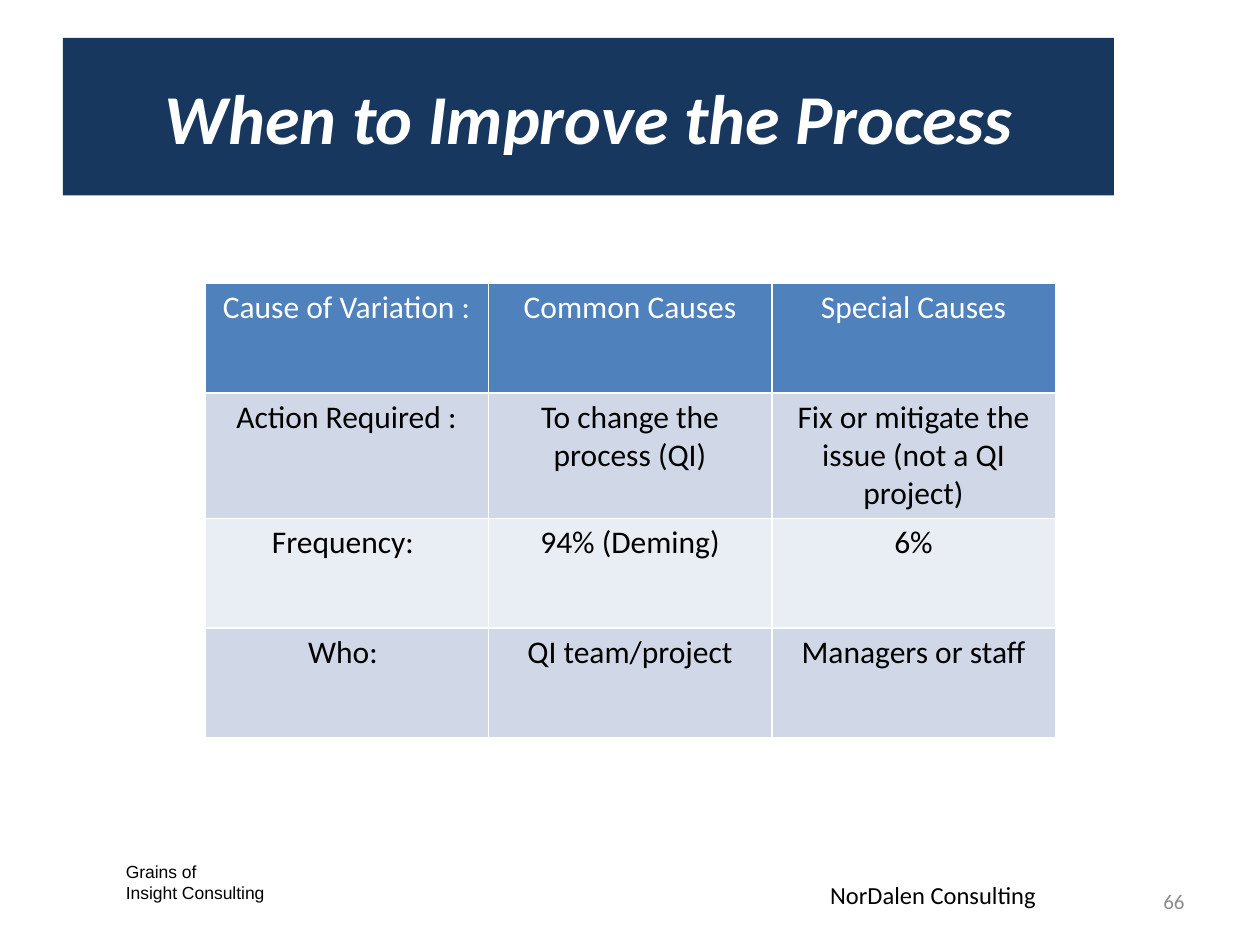
from lxml.etree import SubElement
from pptx import Presentation
from pptx.dml.color import RGBColor
from pptx.enum.shapes import MSO_SHAPE
from pptx.enum.text import MSO_ANCHOR, PP_ALIGN
from pptx.oxml.ns import qn
from pptx.util import Inches, Pt

theme = {
    "navy": "17375E", "head": "4F81BD", "bands": ("D0D8E8", "E9EDF4"),
    "white": "FFFFFF", "black": "000000", "gray": "8C8C8C",
    "main": "Calibri", "side": "Arial",
    "title": 40, "cell": 18, "brand": 14, "page": 12, "note": 10,
}
rows = [
    ("Cause of Variation :", "Common Causes", "Special Causes"),
    ("Action Required :", "To change the process (QI)",
     "Fix or mitigate the issue (not a QI project)"),
    ("Frequency: ", "94% (Deming)", "6%"),
    ("Who: ", "QI team/project", "Managers or staff"),
]

deck = Presentation()
deck.slide_width, deck.slide_height = Inches(10), Inches(7.5)
slide = deck.slides.add_slide(deck.slide_layouts[6])


def area(left, top, width, height):
    wide, high = deck.slide_width / 100, deck.slide_height / 100
    return [round(n) for n in (left * wide, top * high, width * wide, height * high)]


def write(frame, text, size, color, face="main", align=PP_ALIGN.LEFT, bold=False):
    frame.word_wrap = True
    frame.text = text
    for para in frame.paragraphs:
        para.alignment = align
        font = para.font
        font.name, font.size, font.bold = theme[face], Pt(theme[size]), bold
        font.color.rgb = RGBColor.from_string(theme[color])


title = slide.shapes.add_shape(MSO_SHAPE.RECTANGLE, *area(5, 4, 83.4, 16.67))
title.shadow.inherit = False
title.fill.solid()
title.fill.fore_color.rgb = RGBColor.from_string(theme["navy"])
title.line.fill.background()
title.text_frame.vertical_anchor = MSO_ANCHOR.MIDDLE
write(title.text_frame, "When to Improve the Process", "title", "white",
      align=PP_ALIGN.CENTER, bold=True)
title.text_frame.paragraphs[0].font.italic = True

grid = slide.shapes.add_table(4, 3, *area(16.25, 30, 67.5, 47.6)).table
for r, row in enumerate(rows):
    grid.rows[r].height = Inches(0.97 if r == 1 else 0.87)
    fill = theme["bands"][(r - 1) % 2] if r else theme["head"]
    for c, text in enumerate(row):
        cell = grid.cell(r, c)
        cell.margin_left = cell.margin_right = Inches(0.07)
        cell.margin_top = cell.margin_bottom = Inches(0.04)
        for side in ("lnL", "lnR", "lnT", "lnB"):
            line = SubElement(cell._tc.get_or_add_tcPr(), qn(f"a:{side}"), w=str(Pt(1)))
            paint = SubElement(line, qn("a:solidFill"))
            SubElement(paint, qn("a:srgbClr"), val=theme["white"])
        cell.fill.solid()
        cell.fill.fore_color.rgb = RGBColor.from_string(fill)
        write(cell.text_frame, text, "cell", "black" if r else "white",
              align=PP_ALIGN.CENTER)

notes = [
    ((9, 90.5, 23.5, 5.9), "Grains of\nInsight Consulting", "note", "black", "side",
     PP_ALIGN.LEFT, MSO_ANCHOR.TOP),
    ((64.9, 92.5, 29.2, 3.1), "NorDalen Consulting", "brand", "black", "main",
     PP_ALIGN.LEFT, MSO_ANCHOR.TOP),
    ((71.7, 92.67, 23.3, 5.33), "66", "page", "gray", "main",
     PP_ALIGN.RIGHT, MSO_ANCHOR.MIDDLE),
]
for place, text, size, color, face, align, anchor in notes:
    frame = slide.shapes.add_textbox(*area(*place)).text_frame
    frame.vertical_anchor = anchor
    write(frame, text, size, color, face, align)

deck.save("out.pptx")
